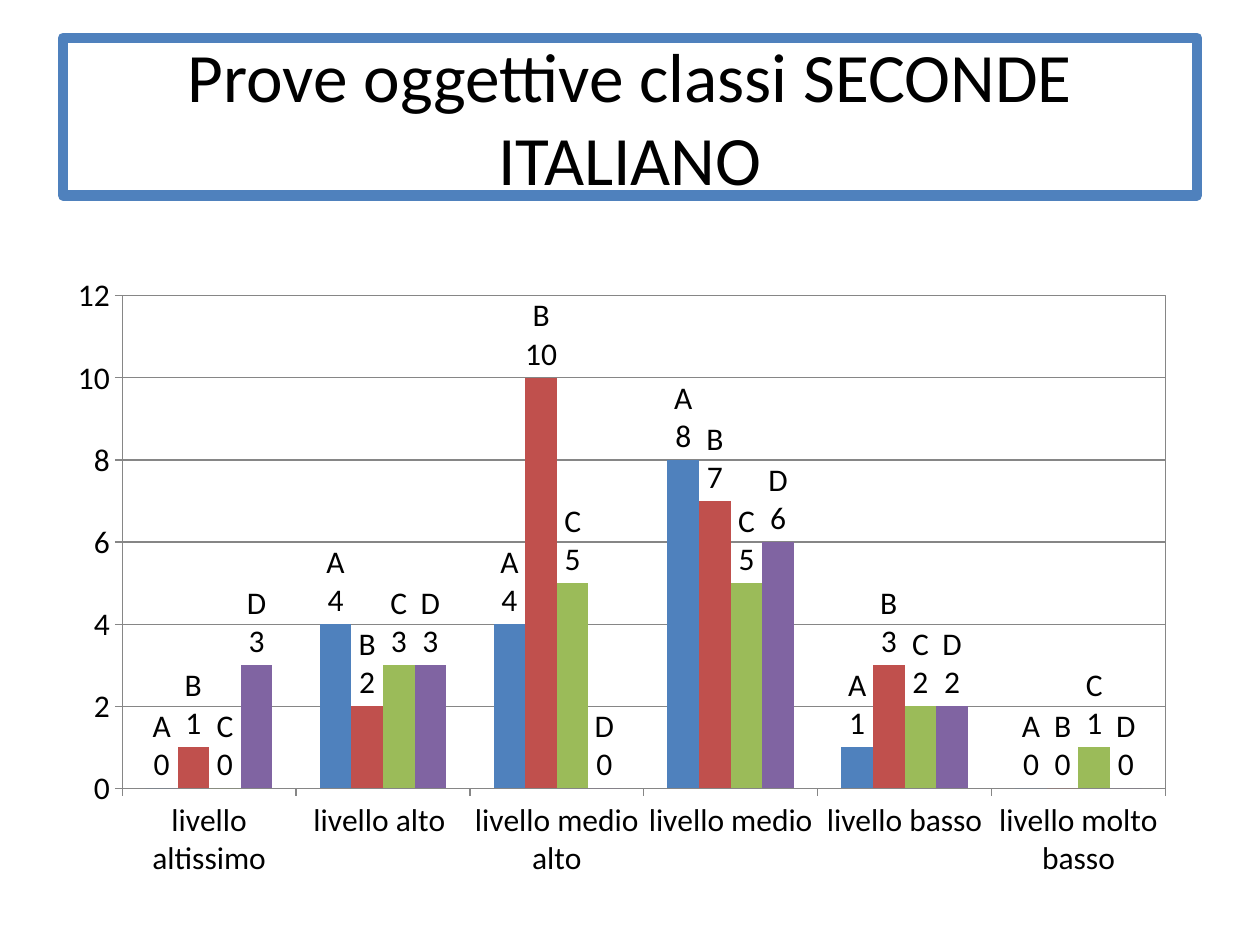
from lxml import etree
from pptx import Presentation
from pptx import util as u
from pptx.chart.data import CategoryChartData
from pptx.dml.color import RGBColor
from pptx.enum import chart as charts, text
from pptx.oxml import parse_xml
from pptx.oxml.ns import nsdecls, qn

COLORS = {"text": "000000", "frame": "4F81BD", "grid": "868686",
          "A": "4F81BD", "B": "C0504D", "C": "9BBB59", "D": "8064A2"}
FONT = "Calibri"
LEVELS = ["livello altissimo", "livello alto ", "livello medio alto",
          "livello medio", "livello basso", "livello molto basso"]
RESULTS = {"A": [0, 4, 4, 8, 1, 0], "B": [1, 2, 10, 7, 3, 0],
           "C": [0, 3, 5, 5, 2, 1], "D": [3, 3, 0, 6, 2, 0]}
PLOT_SHARES = {"x": 0.06, "y": 0.05, "w": 0.92, "h": 0.79}


def color(name):
    return RGBColor.from_string(COLORS[name])


def style_font(font, size):
    font.name = FONT
    font.size = u.Pt(size)
    font.color.rgb = color("text")


def draw_line(line, name, width):
    line.color.rgb = color(name)
    line.width = u.Pt(width)


def add_title(page, box, wording):
    title = page.shapes.title
    title.left, title.top, title.width, title.height = box
    draw_line(title.line, "frame", 6)
    frame = title.text_frame
    frame.text = wording
    frame.word_wrap = True
    frame.auto_size = text.MSO_AUTO_SIZE.NONE
    frame.vertical_anchor = text.MSO_ANCHOR.MIDDLE
    para = frame.paragraphs[0]
    para.alignment = text.PP_ALIGN.CENTER
    for span in para.runs:
        style_font(span.font, 39.6)


def place_plot(chart):
    area = chart._chartSpace.chart.plotArea
    for layout in area.findall(qn("c:layout")):
        area.remove(layout)
    sizes = "".join(f'<c:{key} val="{share}"/>' for key, share in PLOT_SHARES.items())
    area.insert(0, parse_xml(
        f'<c:layout {nsdecls("c")}><c:manualLayout><c:layoutTarget val="inner"/>'
        f'<c:xMode val="edge"/><c:yMode val="edge"/>{sizes}</c:manualLayout></c:layout>'))
    area.append(parse_xml(
        f'<c:spPr {nsdecls("c", "a")}><a:noFill/><a:ln w="9525"><a:solidFill>'
        f'<a:srgbClr val="{COLORS["grid"]}"/></a:solidFill></a:ln></c:spPr>'))


def style_series(series):
    series.format.fill.solid()
    series.format.fill.fore_color.rgb = color(series.name)
    series.invert_if_negative = False
    labels = series.data_labels
    labels.show_value = True
    labels.show_series_name = True
    labels.position = charts.XL_LABEL_POSITION.OUTSIDE_END
    style_font(labels.font, 18)
    separator = etree.Element(qn("c:separator"))
    separator.text = "\n"
    labels._element.find(qn("c:showBubbleSize")).addnext(separator)


def add_results_chart(page, box):
    data = CategoryChartData()
    data.categories = LEVELS
    for name, values in RESULTS.items():
        data.add_series(name, values)
    chart = page.shapes.add_chart(charts.XL_CHART_TYPE.COLUMN_CLUSTERED, *box, data).chart
    chart.has_title = False
    chart.has_legend = False
    style_font(chart.font, 18)
    plot = chart.plots[0]
    plot.vary_by_categories = False
    plot.gap_width = 150
    plot.overlap = 0
    for series in plot.series:
        style_series(series)
    for axis in (chart.category_axis, chart.value_axis):
        axis.major_tick_mark = charts.XL_TICK_MARK.OUTSIDE
        draw_line(axis.format.line, "grid", 0.75)
        style_font(axis.tick_labels.font, 18)
    scale = chart.value_axis
    scale.minimum_scale, scale.maximum_scale, scale.major_unit = 0, 12, 2
    scale.has_major_gridlines = True
    draw_line(scale.major_gridlines.format.line, "grid", 0.75)
    place_plot(chart)


def main():
    deck = Presentation()
    deck.slide_width, deck.slide_height = u.Inches(10), u.Inches(7.5)
    wide, high = deck.slide_width, deck.slide_height
    page = deck.slides.add_slide(deck.slide_layouts[5])
    add_title(page, (int(wide * 0.05), int(high * 0.04), int(wide * 0.9), int(high / 6)),
              "Prove oggettive classi SECONDE\vITALIANO")
    add_results_chart(page, (u.Inches(0.43), int(high * 0.28), int(wide * 0.9), int(high * 0.66)))
    deck.save("out.pptx")


if __name__ == "__main__":
    main()
